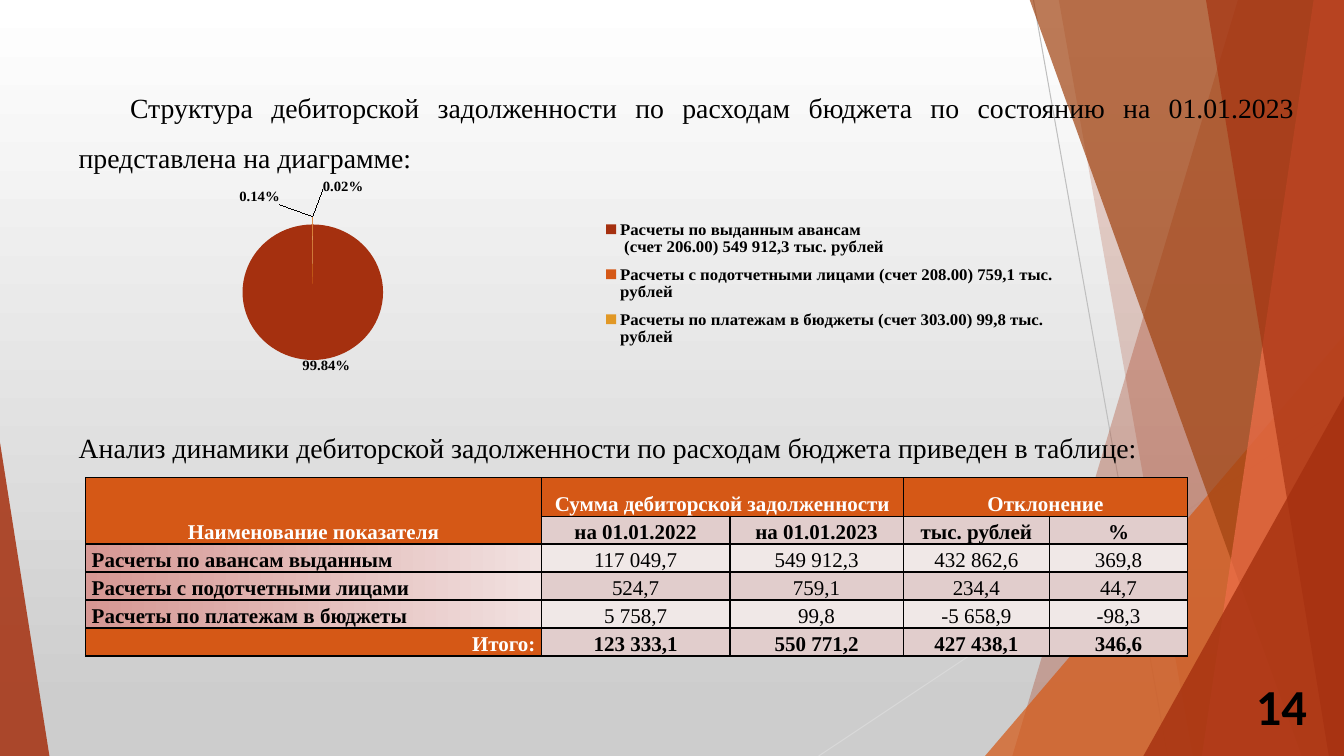
from lxml import etree
from pptx import Presentation
from pptx.chart.data import CategoryChartData
from pptx.dml.color import RGBColor
from pptx.enum import chart as ch, shapes, text
from pptx.oxml import parse_xml
from pptx.oxml.ns import nsdecls, qn
from pptx.util import Inches, Pt

SERIF = "Times New Roman"
RED, ORANGE, GOLD = "A5300F", "D55816", "E19825"
PALE, PALER = "E1CDCC", "F0E8E7"
TOP, BOTTOM, RIGHT = -0.01, 7.5, 13.33

# x of the slanted edge at the bottom and top, x of the right side at the bottom
BANDS = [
    (10.04, 12.28, RIGHT, RED, 30),
    (11.83, 10.5, RIGHT, RED, 20),
    (12.91, 10.21, RIGHT, "A04210", 70),
    (11.92, 13.03, RIGHT, "EE6E4A", 70),
    (13.18, 11.96, RIGHT, RED, 65),
]
CATEGORIES = [
    "Расчеты по выданным авансам\n (счет 206.00) 549 912,3 тыс. рублей",
    "Расчеты с подотчетными лицами (счет 208.00) 759,1 тыс. рублей",
    "Расчеты по платежам в бюджеты (счет 303.00) 99,8 тыс. рублей",
]
SHARES = (0.9984, 0.0014, 0.0002)
LABEL_OFFSETS = [(0.013, -0.03), (-0.052, -0.03), (0.03, -0.11)]
PERIODS = ["на 01.01.2022", "на 01.01.2023", "тыс. рублей", "%"]
DEBTS = [
    ("Расчеты по авансам выданным", "117 049,7", "549 912,3", "432 862,6", "369,8"),
    ("Расчеты с подотчетными лицами", "524,7", "759,1", "234,4", "44,7"),
    ("Расчеты по платежам в бюджеты", "5 758,7", "99,8", "-5 658,9", "-98,3"),
]
TOTALS = ["123\u00a0333,1".replace("\u00a0", " "), "550 771,2", "427 438,1", "346,6"]


def rgb(color):
    return RGBColor.from_string(color)


def fill_solid(fill, color, alpha=100):
    fill.solid()
    fill.fore_color.rgb = rgb(color)
    if alpha < 100:
        clr = fill._xPr.find(".//" + qn("a:srgbClr"))
        etree.SubElement(clr, qn("a:alpha"), val=str(alpha * 1000))


def fill_gradient(fill, start, end, angle=0, end_at=1.0):
    fill.gradient()
    fill.gradient_angle = angle
    for stop, color, pos in zip(fill.gradient_stops, (start, end), (0, end_at)):
        stop.color.rgb = rgb(color)
        stop.position = pos


def style_font(font, size, color="000000", bold=False, name=SERIF):
    font.size, font.bold, font.name = Pt(size), bold, name
    font.color.rgb = rgb(color)


def write(tf, words, align=text.PP_ALIGN.LEFT, spacing=None, indent=0, **font):
    """Fill the first paragraph of a text frame."""
    p = tf.paragraphs[0]
    p.alignment = align
    p.line_spacing = spacing
    if indent:
        p._p.get_or_add_pPr().set("indent", str(Inches(indent)))
    r = p.add_run()
    r.text = words
    style_font(r.font, **font)


def add_text(slide, box, words, margin=0, anchor=text.MSO_ANCHOR.TOP, **fmt):
    tf = slide.shapes.add_textbox(*map(Inches, box)).text_frame
    tf.word_wrap = True
    tf.vertical_anchor = anchor
    tf.margin_left = tf.margin_right = Inches(margin)
    tf.margin_top = tf.margin_bottom = 0
    write(tf, words, **fmt)


def finish_shape(sp, color, alpha):
    sp.shadow.inherit = False
    fill_solid(sp.fill, color, alpha)
    sp.line.fill.background()


def add_line(slide, x1, y1, x2, y2, color):
    ln = slide.shapes.add_connector(
        shapes.MSO_CONNECTOR.STRAIGHT, *map(Inches, (x1, y1, x2, y2)))
    ln.line.color.rgb = rgb(color)
    ln.line.width = Pt(0.75)
    etree.SubElement(ln._element.spPr, qn("a:effectLst"))


def add_band(slide, bottom, top, right, color, alpha):
    points = [(RIGHT, TOP), (right, BOTTOM), (bottom, BOTTOM)]
    fb = slide.shapes.build_freeform(Inches(top), Inches(TOP))
    fb.add_line_segments([(Inches(x), Inches(y)) for x, y in points], close=True)
    finish_shape(fb.convert_to_shape(), color, alpha)


def add_triangle(slide, box, apex, color, alpha):
    sp = slide.shapes.add_shape(
        shapes.MSO_SHAPE.ISOSCELES_TRIANGLE, *map(Inches, box))
    sp.adjustments[0] = apex
    finish_shape(sp, color, alpha)


def add_backdrop(slide):
    fill_gradient(slide.background.fill, "FFFFFF", "CDCDCD", angle=270, end_at=0.94)
    add_line(slide, 10.25, 0, 11.58, 7.5, "BFBFBF")
    add_line(slide, 13.33, 4.03, 8.12, 7.5, "D9D9D9")
    for band in BANDS[:2]:
        add_band(slide, *band)
    add_triangle(slide, (9.77, 3.33, 3.56, 4.17), 1, ORANGE, 72)
    for band in BANDS[2:]:
        add_band(slide, *band)
    add_triangle(slide, (11.34, 3.93, 1.99, 3.57), 1, RED, 80)
    add_triangle(slide, (0, 4.39, 0.49, 3.11), 0, RED, 85)


def manual_layout(x, y, w=None, h=None, inner=False):
    parts = '<c:layoutTarget val="inner"/>' if inner else ""
    if w:
        parts += '<c:xMode val="edge"/><c:yMode val="edge"/>'
    parts += f'<c:x val="{x}"/><c:y val="{y}"/>'
    if w:
        parts += f'<c:w val="{w}"/><c:h val="{h}"/>'
    return parse_xml(f'<c:layout {nsdecls("c")}><c:manualLayout>{parts}'
                     '</c:manualLayout></c:layout>')


def place(parent, layout, index):
    for old in parent.findall(qn("c:layout")):
        parent.remove(old)
    parent.insert(index, layout)


def add_pie(slide):
    data = CategoryChartData(number_format="0.00%")
    data.categories = CATEGORIES
    data.add_series("Series 1", SHARES)
    chart = slide.shapes.add_chart(
        ch.XL_CHART_TYPE.PIE, *map(Inches, (0.64, 1.78, 10.05, 2)), data).chart
    chart.has_title = False
    style_font(chart.font, 10, name="Calibri")
    chart.has_legend = True
    chart.legend.position = ch.XL_LEGEND_POSITION.RIGHT
    chart.legend.include_in_layout = False
    style_font(chart.legend.font, 12, bold=True)
    place(chart.legend._element, manual_layout(0.525, 0.16, 0.46, 0.75), 1)
    place(chart._chartSpace.chart.plotArea,
          manual_layout(0.001, 0.19, 0.488, 0.739, inner=True), 0)
    plot = chart.plots[0]
    plot.vary_by_categories = True
    ser = plot.series[0]
    ser._element.get_or_add_dLbls()
    labels = ser.data_labels
    labels.show_value = True
    labels.number_format, labels.number_format_is_linked = "0.00%", False
    labels.position = ch.XL_LABEL_POSITION.OUTSIDE_END
    style_font(labels.font, 10.5, bold=True)
    leader = labels._element.find(qn("c:showLeaderLines"))
    if leader is None:
        leader = etree.SubElement(labels._element, qn("c:showLeaderLines"))
    leader.set("val", "1")
    for i, (color, offset) in enumerate(zip((RED, ORANGE, GOLD), LABEL_OFFSETS)):
        point = ser.points[i]
        fill_solid(point.format.fill, color)
        label = point.data_label
        style_font(label.font, 10.5, bold=True)
        label.position = ch.XL_LABEL_POSITION.OUTSIDE_END
        dlbl = labels._element.findall(qn("c:dLbl"))[i]
        place(dlbl, manual_layout(*offset), 1)
        dlbl.insert(2, parse_xml(
            f'<c:numFmt {nsdecls("c")} formatCode="0.00%" sourceLinked="0"/>'))
    explosion = parse_xml(f'<c:explosion {nsdecls("c")} val="6"/>')
    ser._element.find(qn("c:dPt")).addprevious(explosion)


def set_cell(cell, words, fill, align=text.PP_ALIGN.CENTER, color="000000", bold=True):
    if fill:
        fill_solid(cell.fill, fill)
    else:
        fill_gradient(cell.fill, "D69793", "F1E1E0")
    side = 0.01 if align == text.PP_ALIGN.CENTER else 0.06
    cell.margin_left = cell.margin_right = Inches(side)
    cell.margin_top, cell.margin_bottom = Inches(0.01), 0
    cell.vertical_anchor = text.MSO_ANCHOR.BOTTOM
    write(cell.text_frame, words, align=align, spacing=1.07,
          size=15, color=color, bold=bold)


def add_borders(cell):
    for i, side in enumerate(("lnL", "lnR", "lnT", "lnB")):
        cell._tc.get_or_add_tcPr().insert(i, parse_xml(
            f'<a:{side} {nsdecls("a")} w="12700"><a:solidFill>'
            f'<a:srgbClr val="000000"/></a:solidFill></a:{side}>'))


def add_debt_table(slide):
    table = slide.shapes.add_table(
        6, 5, *map(Inches, (0.85, 4.74, 10.92, 1.68))).table
    for col, width in zip(table.columns, (4.52, 1.87, 1.72, 1.45, 1.37)):
        col.width = Inches(width)
    for i, row in enumerate(table.rows):
        row.height = Inches(0.26 if i else 0.38)
    cell = table.cell
    cell(0, 0).merge(cell(1, 0))
    cell(0, 1).merge(cell(0, 2))
    cell(0, 3).merge(cell(0, 4))
    heads = {0: "Наименование показателя", 1: "Сумма дебиторской задолженности",
             3: "Отклонение"}
    for c, head in heads.items():
        set_cell(cell(0, c), head, ORANGE, color="FFFFFF")
    set_cell(cell(5, 0), "Итого:", ORANGE, text.PP_ALIGN.RIGHT, "FFFFFF")
    for c, (period, total) in enumerate(zip(PERIODS, TOTALS), 1):
        set_cell(cell(1, c), period, PALE)
        set_cell(cell(5, c), total, PALE)
    for r, (name, *values) in enumerate(DEBTS, 2):
        set_cell(cell(r, 0), name, None, text.PP_ALIGN.LEFT)
        for c, value in enumerate(values, 1):
            set_cell(cell(r, c), value, PALE if r % 2 else PALER, bold=False)
    for item in table.iter_cells():
        add_borders(item)


def main():
    prs = Presentation()
    prs.slide_width, prs.slide_height = Inches(13.33), Inches(7.5)
    slide = prs.slides.add_slide(prs.slide_layouts[6])
    add_backdrop(slide)
    body = dict(align=text.PP_ALIGN.JUSTIFY, spacing=Pt(35.7), size=19.8)
    add_text(slide, (0.78, 0.74, 12.05, 1), "Структура дебиторской задолженности по "
             "расходам бюджета по состоянию на 01.01.2023 представлена на диаграмме:",
             indent=0.51, **body)
    add_text(slide, (0.78, 4.11, 12.05, 0.5), "Анализ динамики дебиторской "
             "задолженности по расходам бюджета приведен в таблице:", **body)
    add_text(slide, (12.3, 6.49, 0.76, 1.01), "14", margin=0.1,
             anchor=text.MSO_ANCHOR.MIDDLE, align=text.PP_ALIGN.RIGHT,
             size=36, bold=True, name="Calibri")
    add_pie(slide)
    add_debt_table(slide)


    prs.save("out.pptx")


if __name__ == "__main__":
    main()
